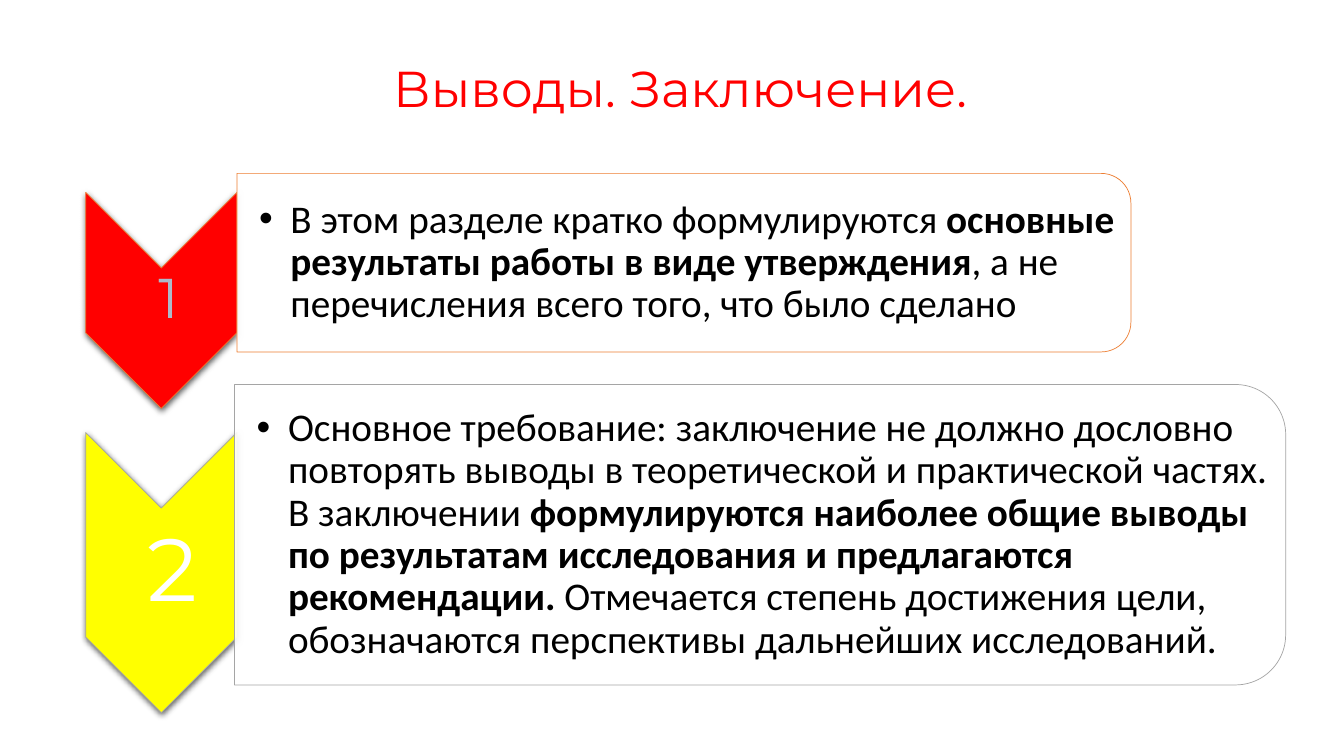
from lxml import etree
from pptx import Presentation
from pptx.dml.color import RGBColor
from pptx.enum.shapes import MSO_SHAPE
from pptx.enum.text import MSO_ANCHOR, PP_ALIGN
from pptx.oxml.ns import qn
from pptx.util import Cm, Pt

CHEVRON, CARD = MSO_SHAPE.CHEVRON, MSO_SHAPE.ROUND_2_SAME_RECTANGLE
MIDDLE, CENTER, LEFT = MSO_ANCHOR.MIDDLE, PP_ALIGN.CENTER, PP_ALIGN.LEFT

# Content: text parts are (words, bold); frames are left, top, width, height in cm
TITLE = "Выводы. Заключение."
STEPS = [
    {
        "mark": " 1", "size": 40, "ink": "ADB9CA", "fill": "FF0000", "line": "ED7D31",
        "arrow": (2.16, 4.85, 3.81, 5.44), "card": (5.97, 4.37, 22.53, 4.5),
        "parts": [
            ("В этом разделе кратко формулируются ", False),
            ("основные результаты работы в виде утверждения", True),
            (", а не перечисления всего того, что было сделано", False),
        ],
    },
    {
        "mark": " 2", "size": 63, "ink": "FFFFFF", "fill": "FFFF00", "line": "A5A5A5",
        "arrow": (2.16, 10.9, 3.81, 7.06), "card": (5.91, 9.69, 26.49, 7.57),
        "parts": [
            ("Основное требование: заключение не должно дословно повторять выводы "
             "в теоретической и практической частях. В заключении ", False),
            ("формулируются наиболее общие выводы по результатам исследования "
             "и предлагаются рекомендации. ", True),
            ("Отмечается степень достижения цели, обозначаются перспективы "
             "дальнейших исследований.", False),
        ],
    },
]
THEME = {
    "head": "Montserrat", "body": "Calibri", "title": "FF0000", "text": "000000",
    "card": "FFFFFF", "shade": "000000", "title_size": 36, "body_size": 28,
}
CORNER = 0.1667 * 0.29  # text inset caused by the rounded corners


def add_tag(parent, name, **attrs):
    return etree.SubElement(parent, qn(name), attrs)


def add_turned(slide, kind, frame, fill, line):
    """Add a shape turned by 90 degrees that fills the given visible frame."""
    left, top, width, height = frame
    shift = (width - height) / 2
    shape = slide.shapes.add_shape(
        kind, Cm(left + shift), Cm(top - shift), Cm(height), Cm(width))
    shape.rotation = 90
    shape.shadow.inherit = False
    shape.fill.solid()
    shape.fill.fore_color.rgb = RGBColor.from_string(fill)
    shape.line.color.rgb = RGBColor.from_string(line)
    shape.line.width = Pt(0.5)
    return shape


def add_shade(shape):
    effects = shape._element.spPr.find(qn("a:effectLst"))
    shade = add_tag(effects, "a:outerShdw", blurRad=str(Pt(4.5)), dist=str(Pt(1.5)),
                    dir="5400000", algn="ctr", rotWithShape="0")
    color = add_tag(shade, "a:srgbClr", val=THEME["shade"])
    add_tag(color, "a:alpha", val="63000")


def add_text(slide, frame, parts, font, size, ink, align, pads):
    box = slide.shapes.add_textbox(*map(Cm, frame))
    body = box.text_frame
    body.word_wrap = True
    body.vertical_anchor = MIDDLE
    body.margin_left = Cm(pads[0])
    body.margin_right = body.margin_top = body.margin_bottom = Cm(pads[1])
    para = body.paragraphs[0]
    para.alignment = align
    para.line_spacing = 0.9
    for words, bold in parts:
        run = para.add_run()
        run.text = words
        run.font.name = font
        run.font.size = Pt(size)
        run.font.bold = bold
        run.font.color.rgb = RGBColor.from_string(ink)
    return para


def add_bullet(para):
    props = para._p.get_or_add_pPr()
    props.set("marL", str(Cm(0.79)))
    props.set("indent", str(-Cm(0.79)))
    add_tag(props, "a:buFont", typeface="Arial")
    add_tag(props, "a:buChar", char="•")


def add_step(slide, step):
    # Arrow with its number between notch and tip
    left, top, width, height = step["arrow"]
    add_shade(add_turned(slide, CHEVRON, step["arrow"], step["fill"], step["line"]))
    add_text(slide, (left, top + width / 2, width, height - width),
             [(step["mark"], False)], THEME["head"], step["size"], step["ink"],
             CENTER, (0.1, 0.1))

    # Card with its bulleted text
    left, top, width, height = step["card"]
    card = add_turned(slide, CARD, step["card"], THEME["card"], step["line"])
    color = card.fill._xPr.find(qn("a:solidFill"))[0]
    add_tag(color, "a:alpha", val="90000")
    inset = height * CORNER
    para = add_text(slide, (left, top + inset, width - inset, height - 2 * inset),
                    step["parts"], THEME["body"], THEME["body_size"], THEME["text"],
                    LEFT, (0.56, 0.05))
    add_bullet(para)


def main():
    deck = Presentation()
    deck.slide_width, deck.slide_height = Cm(33.87), Cm(19.05)
    slide = deck.slides.add_slide(deck.slide_layouts[6])
    for step in STEPS:
        add_step(slide, step)
    # Title
    add_text(slide, (1.83, 0.7, 30.5, 3.18), [(TITLE, False)], THEME["head"],
             THEME["title_size"], THEME["title"], CENTER, (0.25, 0.13))
    deck.save("out.pptx")


if __name__ == "__main__":
    main()
